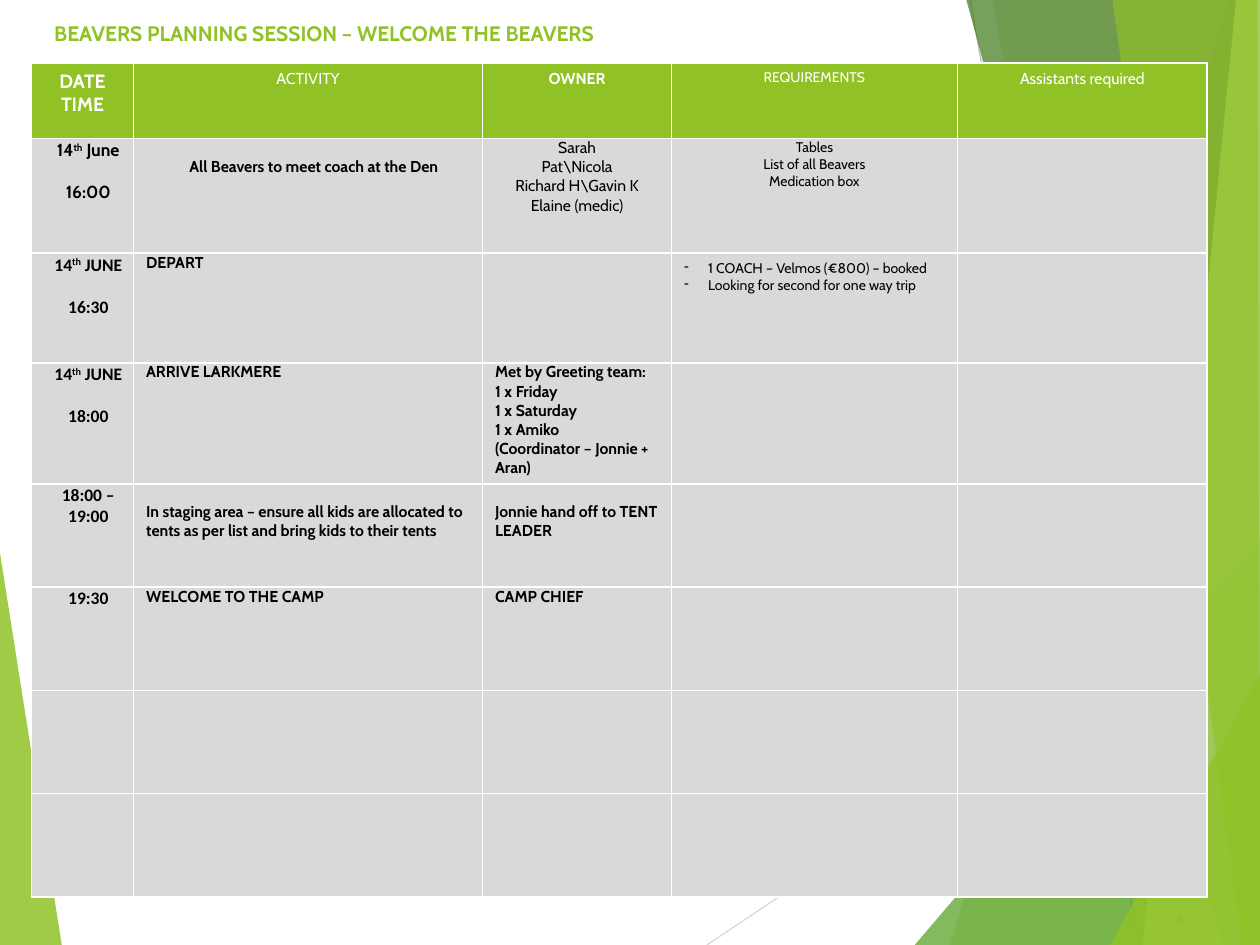
from dataclasses import dataclass

from lxml import etree
from pptx import Presentation, util as u
from pptx.dml.color import RGBColor
from pptx.enum import text as t
from pptx.oxml import ns

CENTER, LEFT = t.PP_ALIGN.CENTER, t.PP_ALIGN.LEFT


@dataclass(frozen=True)
class Theme:
    font: str = "Cabin"
    time_font: str = "Calibri"
    green: str = "90C226"
    leaf: str = "54A021"
    forest: str = "3F7819"
    lime: str = "C0E474"
    cell: str = "D9D9D9"
    pale_line: str = "D9D9D9"
    mid_line: str = "BFBFBF"
    white: str = "FFFFFF"
    black: str = "000000"
    title: float = 12
    heading: float = 11
    time: float = 10
    body: float = 9
    small: float = 8


@dataclass
class Entry:
    """Wording and look of one table cell."""
    lines: tuple
    size: float = Theme.body
    bold: bool = True
    align: int = LEFT
    font: str = Theme.font
    color: str = Theme.black
    margins: tuple = (0.1, 0, 0.07, 0)  # left, top, right, bottom
    gap: float = 0  # points between the lines
    dashed: bool = False


class PlanSlide:
    def __init__(self, prs, theme):
        self.theme = theme
        self.slide = prs.slides.add_slide(prs.slide_layouts[5])
        self.shapes = self.slide.shapes

    def style(self, paragraph, size, color, bold, font, align=LEFT):
        paragraph.alignment = align
        paragraph.font.size = u.Pt(size)
        paragraph.font.bold = bold
        paragraph.font.name = font
        paragraph.font.color.rgb = RGBColor.from_string(color)

    def facet(self, points, color, opacity):
        corners = [(u.Inches(x), u.Inches(y)) for x, y in points]
        builder = self.shapes.build_freeform(*corners[0])
        builder.add_line_segments(corners[1:], close=True)
        shape = builder.convert_to_shape()
        shape.shadow.inherit = False
        shape.line.fill.background()
        shape.fill.solid()
        shape.fill.fore_color.rgb = RGBColor.from_string(color)
        rgb = shape.fill._xPr.find(".//" + ns.qn("a:srgbClr"))
        etree.SubElement(rgb, ns.qn("a:alpha"), val=str(opacity * 1000))

    def line(self, start, end, color):
        ends = [u.Inches(v) for v in (*start, *end)]
        connector = self.shapes.add_connector(1, *ends)
        connector.line.color.rgb = RGBColor.from_string(color)
        connector.line.width = u.Pt(0.75)
        etree.SubElement(connector._element.spPr, ns.qn("a:effectLst"))

    def title(self, wording):
        title = self.shapes.title
        title.left, title.top = u.Inches(0.33), u.Inches(-0.08)
        title.width, title.height = u.Inches(9.25), u.Inches(0.67)
        frame = title.text_frame
        frame.text = wording
        frame.vertical_anchor = t.MSO_ANCHOR.MIDDLE
        frame.margin_top = u.Inches(0.07)
        self.style(frame.paragraphs[0], self.theme.title, self.theme.green,
                   True, self.theme.font)
        self.shapes._spTree.append(title._element)  # in front of the facets

    def page_number(self, wording):
        box = self.shapes.add_textbox(u.Inches(9.05), u.Inches(7.17), u.Inches(0.45), u.Inches(0.3))
        box.text_frame.word_wrap = True
        box.text_frame.text = wording
        self.style(box.text_frame.paragraphs[0], self.theme.body,
                   self.theme.green, False, self.theme.font, t.PP_ALIGN.RIGHT)

    def fill_cell(self, cell, entry):
        (cell.margin_left, cell.margin_top,
         cell.margin_right, cell.margin_bottom) = map(u.Inches, entry.margins)
        frame = cell.text_frame
        for i, wording in enumerate(entry.lines):
            paragraph = frame.add_paragraph() if i else frame.paragraphs[0]
            # Text between carets is raised
            for j, part in enumerate(wording.split("^")):
                run = paragraph.add_run()
                run.text = part
                if j % 2:
                    run.font._element.set("baseline", "30000")
            self.style(paragraph, entry.size, entry.color, entry.bold,
                       entry.font, entry.align)
            if i and entry.gap:
                paragraph.space_before = u.Pt(entry.gap)
            if entry.dashed:
                props = paragraph._p.get_or_add_pPr()
                indent = u.Inches(0.19)
                props.set("marL", str(indent))
                props.set("indent", str(-indent))
                props.insert_element_before(
                    props.makeelement(ns.qn("a:buChar"), {"char": "-"}),
                    "a:tabLst", "a:defRPr", "a:extLst")

    def table(self, left, top, widths, heights, rows):
        table = self.shapes.add_table(
            len(heights), len(widths), u.Inches(left), u.Inches(top),
            u.Inches(sum(widths)), u.Inches(sum(heights))).table
        for column, width in zip(table.columns, widths):
            column.width = u.Inches(width)
        for r, height in enumerate(heights):
            table.rows[r].height = u.Inches(height)
            for c in range(len(widths)):
                cell = table.cell(r, c)
                cell.fill.solid()
                cell.fill.fore_color.rgb = RGBColor.from_string(
                    self.theme.cell if r else self.theme.green)
                entry = rows[r].get(c) if r < len(rows) else None
                if entry:
                    self.fill_cell(cell, entry)


def heading(*lines, size=Theme.body, bold=False):
    return Entry(lines, size, bold, CENTER, color=Theme.white,
                 margins=(0.1, 0.05, 0.1, 0.05))


def time(*lines, font=Theme.time_font):
    return Entry(lines, Theme.time, True, CENTER, font,
                 margins=(0.1, 0.01, 0.01, 0), gap=12)


def owner(*lines, top=0, **look):
    return Entry(lines, margins=(0.1, top, 0.1, 0.05), **look)


def main():
    theme = Theme()
    prs = Presentation()
    prs.slide_width, prs.slide_height = u.Inches(10), u.Inches(7.5)
    plan = PlanSlide(prs, theme)

    # Green facets along both edges
    plan.facet([(0, 4.39), (0.49, 7.5), (0, 7.5)], theme.green, 85)
    plan.line((5.61, 7.5), (10, 4.57), theme.pale_line)
    plan.line((7.7, 0), (9.04, 7.5), theme.mid_line)
    for top_left, bottom_left, top_right, color, opacity in [
        ((9.75, 0), (7.54, 7.5), (10, 0), theme.green, 30),
        ((7.88, 0), (9.19, 7.5), (10, 0), theme.green, 20),
        ((10, 4.29), (7.26, 7.5), None, theme.leaf, 72),
        ((7.67, 0), (9.7, 7.5), (10, 0), theme.forest, 70),
        ((9.81, 0), (9.07, 7.5), (10, 0), theme.lime, 70),
        ((8.83, 0), (9.86, 7.5), (9.98, 0), theme.green, 65),
        ((10, 5.35), (8.81, 7.5), None, theme.green, 80),
    ]:
        corners = [top_left, bottom_left, (10, 7.5), top_right]
        plan.facet([p for p in corners if p], color, opacity)

    plan.title("BEAVERS PLANNING SESSION – WELCOME THE BEAVERS")

    # Schedule: each row maps a column number to its entry
    line = 0.15  # one line of body text
    schedule = [
        dict(enumerate([
            heading("DATE", "TIME", size=theme.heading, bold=True),
            heading("ACTIVITY"),
            heading("OWNER", bold=True),
            heading("REQUIREMENTS", size=theme.small),
            heading("Assistants required")])),
        {0: time("14^th^ June", "16:00", font=theme.font),
         1: Entry(("All Beavers to meet coach at the Den",), align=CENTER,
                  margins=(0.1, line, 0.01, 0)),
         2: owner("Sarah", "Pat\\Nicola", "Richard H\\Gavin K",
                  "Elaine (medic)", bold=False, align=CENTER),
         3: owner("Tables", "List of all Beavers", "Medication box",
                  size=theme.small, bold=False, align=CENTER)},
        {0: time("14^th^ JUNE", "16:30"),
         1: Entry(("DEPART",)),
         3: owner("1 COACH – Velmos (€800) – booked",
                  "Looking for second for one way trip", top=0.05,
                  size=theme.small, bold=False, dashed=True)},
        {0: time("14^th^ JUNE", "18:00"),
         1: Entry(("ARRIVE LARKMERE",)),
         2: owner("Met by Greeting team:", "1 x Friday", "1 x Saturday",
                  "1 x Amiko", "(Coordinator – Jonnie + Aran)")},
        {0: time("18:00 – 19:00"),
         1: Entry(("In staging area – ensure all kids are allocated to "
                   "tents as per list and bring kids to their tents",),
                  margins=(0.1, line, 0.07, 0)),
         2: owner("Jonnie hand off to TENT LEADER", top=line)},
        {0: time("19:30"),
         1: Entry(("WELCOME TO THE CAMP",)),
         2: owner("CAMP CHIEF")},
    ]
    plan.table(0.25, 0.5, [0.81, 2.77, 1.5, 2.27, 1.98],
               [0.6, 0.91, 0.87] + [0.82] * 5, schedule)
    plan.page_number("8")
    prs.save("out.pptx")


if __name__ == "__main__":
    main()
